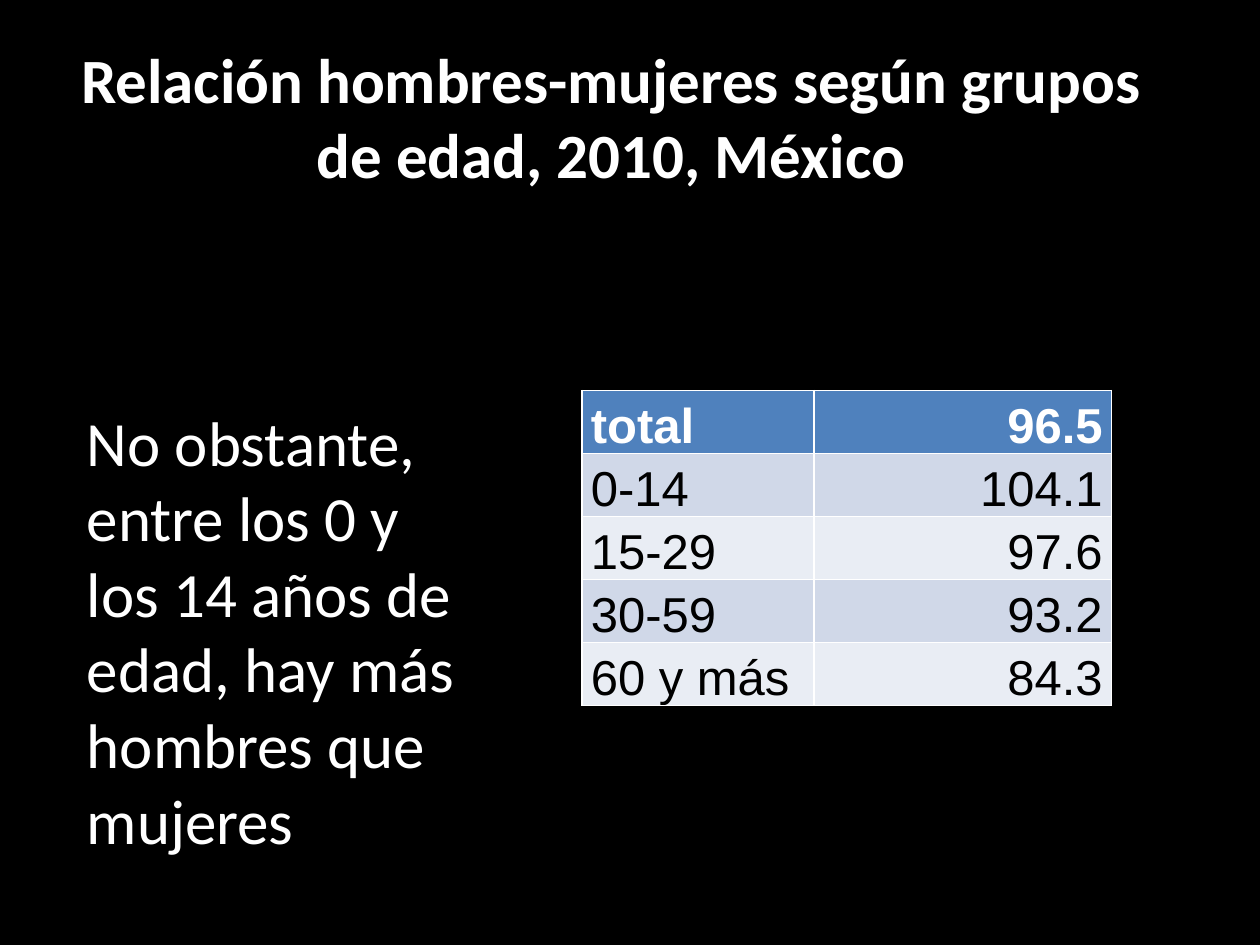
"""Build the slide on the ratio of men to women by age group."""
import pptx
import pptx.util
from pptx.dml.color import RGBColor
from pptx.enum.text import MSO_ANCHOR, PP_ALIGN

TITLE = "Relación hombres-mujeres según grupos de edad, 2010, México"
BODY = "No obstante, entre los 0 y los 14 años de edad, hay más hombres que mujeres"
ROWS = [("total", "96.5"), ("0-14", "104.1"), ("15-29", "97.6"),
        ("30-59", "93.2"), ("60 y más", "84.3")]
COLORS = {"back": "000000", "light": "FFFFFF", "dark": "000000",
          "header": "4F81BD", "odd": "D0D8E8", "even": "E9EDF4"}
ALIGNS = (PP_ALIGN.LEFT, PP_ALIGN.RIGHT)
COL_WIDTHS = (1.84, 2.36)
ROW_HEIGHT = 0.5
TITLE_BOX = (0.5, 0.3, 8.7, 1.27)
BODY_BOX = (0.59, 1.57, 3.29, 5.3)
TABLE_BOX = (4.62, 3.1, sum(COL_WIDTHS), ROW_HEIGHT * len(ROWS))
BODY_FONT = {"name": "Calibri", "size": pptx.util.Pt(36), "bold": False}
TITLE_FONT = {**BODY_FONT, "bold": True}
CELL_FONT = {"name": "Arial", "size": pptx.util.Pt(28)}
CELL_FORMAT = {"margin_left": pptx.util.Inches(0.07), "margin_right": pptx.util.Inches(0.07),
               "margin_top": 0, "margin_bottom": 0}
BODY_FORMAT = {"word_wrap": True, "vertical_anchor": MSO_ANCHOR.TOP,
               "margin_top": pptx.util.Inches(1.63), "margin_bottom": 0}
TITLE_FORMAT = {"word_wrap": True, "vertical_anchor": MSO_ANCHOR.BOTTOM}


def inches(box):
    return [pptx.util.Inches(v) for v in box]


def assign(obj, values):
    for name, value in values.items():
        setattr(obj, name, value)


def write(tf, text, font, color, align):
    p = tf.paragraphs[0]
    p.alignment = align
    r = p.add_run()
    r.text = text
    assign(r.font, font)
    r.font.color.rgb = RGBColor.from_string(COLORS[color])
    return p


def fill(obj, color):
    obj.fill.solid()
    obj.fill.fore_color.rgb = RGBColor.from_string(COLORS[color])


def add_table(s):
    table = s.shapes.add_table(len(ROWS), len(COL_WIDTHS), *inches(TABLE_BOX)).table
    for column, width in zip(table.columns, COL_WIDTHS):
        column.width = pptx.util.Inches(width)
    for i, row in enumerate(ROWS):
        header = i == 0
        band = "header" if header else ("even", "odd")[i % 2]
        for j, text in enumerate(row):
            cell = table.cell(i, j)
            assign(cell, CELL_FORMAT)
            fill(cell, band)
            p = write(cell.text_frame, text, {**CELL_FONT, "bold": header},
                      "light" if header else "dark", ALIGNS[j])
            p.line_spacing = 1.15


def main():
    prs = pptx.Presentation()
    prs.slide_width, prs.slide_height = inches((10, 7.5))
    s = prs.slides.add_slide(prs.slide_layouts[5])
    fill(s.background, "back")

    title = s.shapes.title
    assign(title, dict(zip(("left", "top", "width", "height"), inches(TITLE_BOX))))
    assign(title.text_frame, TITLE_FORMAT)
    write(title.text_frame, TITLE, TITLE_FONT, "light", PP_ALIGN.CENTER)

    add_table(s)

    tf = s.shapes.add_textbox(*inches(BODY_BOX)).text_frame
    assign(tf, BODY_FORMAT)
    write(tf, BODY, BODY_FONT, "light", PP_ALIGN.LEFT)
    prs.save("out.pptx")


if __name__ == "__main__":
    main()
